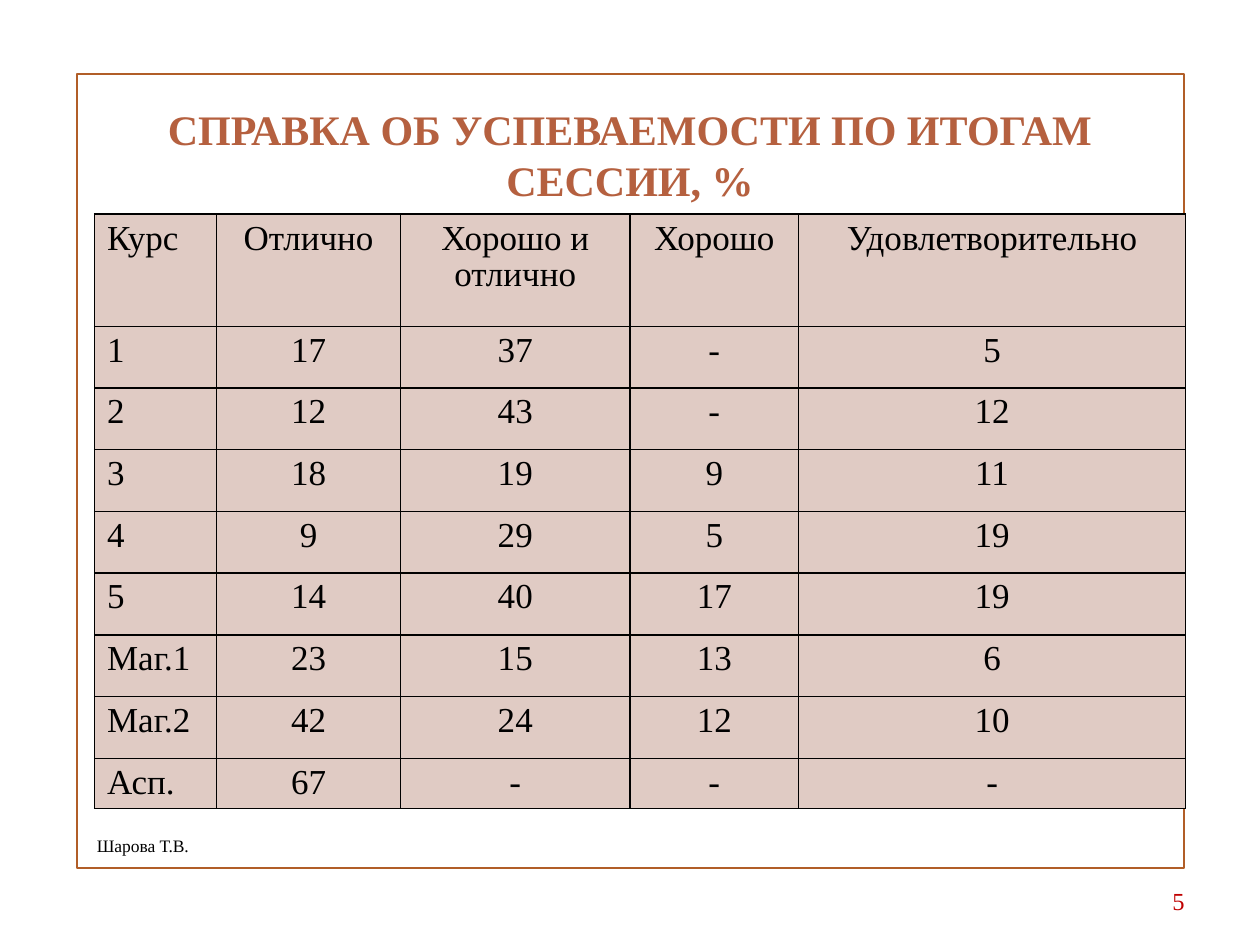
from pptx import Presentation, util as u
from pptx.dml.color import RGBColor
from pptx.enum import shapes, text
from pptx.oxml import parse_xml
from pptx.oxml.ns import nsdecls

WHITE = RGBColor(0xFF, 0xFF, 0xFF)
BLACK = RGBColor(0, 0, 0)
FRAME = RGBColor(0xB1, 0x5E, 0x28)
TITLE = RGBColor(0xB5, 0x60, 0x3F)
CELL = RGBColor(0xE0, 0xCB, 0xC4)
RED = RGBColor(0xC0, 0, 0)
LEFT, CENTER, RIGHT = text.PP_ALIGN.LEFT, text.PP_ALIGN.CENTER, text.PP_ALIGN.RIGHT

COLS = [0.97, 1.46, 1.82, 1.34, 3.07]
ROWS = [0.89] + [0.49] * 7 + [0.4]
GRADES = [
    ["Курс", "Отлично", "Хорошо и отлично", "Хорошо", "Удовлетворительно"],
    ["1", "17", "37", "-", "5"],
    ["2", "12", "43", "-", "12"],
    ["3", "18", "19", "9", "11"],
    ["4", "9", "29", "5", "19"],
    ["5", "14", "40", "17", "19"],
    ["Маг.1", "23", "15", "13", "6"],
    ["Маг.2", "42", "24", "12", "10"],
    ["Асп.", "67", "-", "-", "-"],
]


class Deck:
    """Holds the style and the current slide."""

    font = "Times New Roman"

    def __init__(self, prs):
        self.s = prs.slides.add_slide(prs.slide_layouts[5])
        self.s.background.fill.solid()
        self.s.background.fill.fore_color.rgb = WHITE

    def add_text(self, tf, words, size, color, align=LEFT, bold=False):
        p = tf.paragraphs[0]
        p.alignment = align
        r = p.add_run()
        r.text = words
        r.font.name, r.font.size, r.font.bold = self.font, u.Pt(size), bold
        r.font.color.rgb = color
        return p

    def frame(self, *box):
        sp = self.s.shapes.add_shape(shapes.MSO_SHAPE.RECTANGLE, *map(u.Inches, box))
        sp.shadow.inherit = False
        sp.fill.background()
        sp.line.color.rgb = FRAME
        sp.line.width = u.Pt(1.25)

    def title(self, words, *box):
        sp = self.s.shapes.title
        sp.left, sp.top, sp.width, sp.height = map(u.Inches, box)
        tf = sp.text_frame
        tf.word_wrap = True
        tf.auto_size = text.MSO_AUTO_SIZE.NONE
        tf.vertical_anchor = text.MSO_ANCHOR.MIDDLE
        self.add_text(tf, words, 24, TITLE, CENTER, True)

    def label(self, words, size, color, align, *box):
        tf = self.s.shapes.add_textbox(*map(u.Inches, box)).text_frame
        tf.word_wrap = True
        tf.vertical_anchor = text.MSO_ANCHOR.MIDDLE
        self.add_text(tf, words, size, color, align)

    def borders(self, cell):
        tc_pr = cell._tc.get_or_add_tcPr()
        for side in "LRTB":
            tc_pr.append(parse_xml(
                f'<a:ln{side} {nsdecls("a")} w="12700"><a:solidFill>'
                f'<a:srgbClr val="{BLACK}"/></a:solidFill></a:ln{side}>'))

    def table(self, data, cols, rows, left, top):
        box = map(u.Inches, (left, top, sum(cols), sum(rows)))
        tbl = self.s.shapes.add_table(len(rows), len(cols), *box).table
        tbl.first_row = tbl.horz_banding = False
        for col, width in zip(tbl.columns, cols):
            col.width = u.Inches(width)
        for row, height, values in zip(tbl.rows, rows, data):
            row.height = u.Inches(height)
            for i, (cell, value) in enumerate(zip(row.cells, values)):
                self.borders(cell)
                cell.fill.solid()
                cell.fill.fore_color.rgb = CELL
                p = self.add_text(cell.text_frame, value, 20, BLACK, CENTER if i else LEFT)
                p.line_spacing = 0.95


def main():
    prs = Presentation()
    prs.slide_width, prs.slide_height = u.Inches(10), u.Inches(7.5)
    deck = Deck(prs)
    deck.frame(0.61, 0.59, 8.79, 6.3)
    deck.title("СПРАВКА ОБ УСПЕВАЕМОСТИ ПО ИТОГАМ СЕССИИ, %", 0.5, 0.68, 9, 1.09)
    deck.table(GRADES, COLS, ROWS, 0.75, 1.7)
    deck.label("5", 14, RED, RIGHT, 7.17, 6.95, 2.33, 0.4)
    deck.label("Шарова Т.В.", 10, BLACK, LEFT, 0.67, 6.51, 3.17, 0.4)
    prs.save("out.pptx")


if __name__ == "__main__":
    main()
